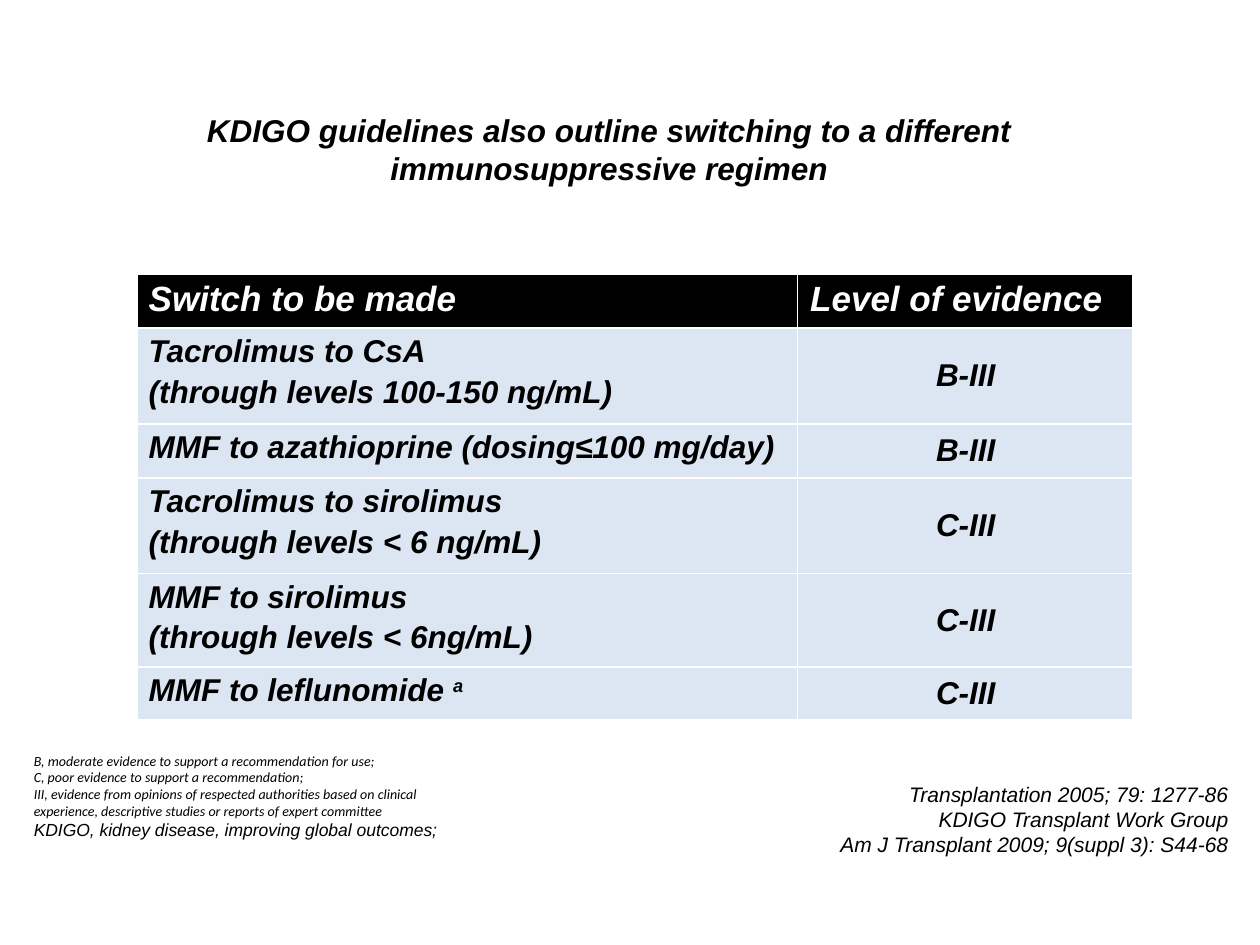
from lxml.etree import SubElement
from pptx import Presentation
from pptx.dml.color import RGBColor
from pptx.enum.text import MSO_ANCHOR, PP_ALIGN
from pptx.oxml import parse_xml
from pptx.oxml.ns import nsdecls
from pptx.util import Inches, Pt

BLACK = RGBColor(0x00, 0x00, 0x00)
WHITE = RGBColor(0xFF, 0xFF, 0xFF)
PALE_BLUE = RGBColor(0xDC, 0xE6, 0xF2)

TITLE = {"name": "Arial", "size": Pt(18), "bold": True, "italic": True}
HEADER = {**TITLE, "size": Pt(20)}
CITATION = {"name": "Arial", "size": Pt(12), "italic": True}
GRADE_NOTE = {"name": "Calibri", "size": Pt(8), "italic": True}
ABBREVIATION = {**CITATION, "size": Pt(10)}


def add_lines(frame, lines, align, color=BLACK, space_before=None):
    for index, (text, style) in enumerate(lines):
        paragraph = frame.paragraphs[0] if index == 0 else frame.add_paragraph()
        paragraph.alignment = align
        paragraph.space_before = space_before
        run = paragraph.add_run()
        run.text = text
        for attribute, value in style.items():
            setattr(run.font, attribute, value)
        run.font.color.rgb = color


def add_borders(cell, widths):
    properties = cell._tc.get_or_add_tcPr()
    for index, (side, width) in enumerate(zip("LRTB", widths)):
        border = parse_xml(f'<a:ln{side} {nsdecls("a")} w="{Pt(width)}"/>')
        fill = SubElement(border, border.tag.replace(f"ln{side}", "solidFill"))
        SubElement(fill, border.tag.replace(f"ln{side}", "srgbClr"), val=str(WHITE))
        properties.insert(index, border)


presentation = Presentation()
presentation.slide_width = Inches(10)
presentation.slide_height = Inches(7.5)
slide = presentation.slides.add_slide(presentation.slide_layouts[6])

title = "KDIGO guidelines also outline switching to a different immunosuppressive regimen"
grade_notes = [
    "B, moderate evidence to support a recommendation for use;",
    "C, poor evidence to support a recommendation;",
    "III, evidence from opinions of respected authorities based on clinical",
    "experience, descriptive studies or reports of expert committee",
]
footnotes = [(note, GRADE_NOTE) for note in grade_notes]
footnotes.append(("KDIGO, kidney disease, improving global outcomes;", ABBREVIATION))
citations = [
    "Transplantation 2005; 79: 1277-86",
    "KDIGO Transplant Work Group",
    "Am J Transplant 2009; 9(suppl 3): S44-68",
]
text_blocks = [
    ((0.42, 0.83, 8.83, 0.71), [(title, TITLE)], PP_ALIGN.CENTER, True),
    ((0.17, 5.92, 3.43, 0.81), footnotes, PP_ALIGN.LEFT, False),
    ((6, 6.15, 3.85, 0.71), [(line, CITATION) for line in citations], PP_ALIGN.RIGHT, True),
]
for bounds, lines, align, wraps in text_blocks:
    frame = slide.shapes.add_textbox(*map(Inches, bounds)).text_frame
    frame.word_wrap = wraps
    add_lines(frame, lines, align)

switches = [
    (["Switch to be made"], "Level of evidence", 0.43),
    (["Tacrolimus to CsA", "(through levels 100-150 ng/mL)"], "B-III", 0.76),
    (["MMF to azathioprine (dosing≤100 mg/day)"], "B-III", 0.43),
    (["Tacrolimus to sirolimus", "(through levels < 6 ng/mL)"], "C-III", 0.76),
    (["MMF to sirolimus", "(through levels < 6ng/mL)"], "C-III", 0.7),
    (["MMF to leflunomide "], "C-III", 0.43),
]
last_row = len(switches) - 1
evidence_table = slide.shapes.add_table(
    len(switches), 2, Inches(1.08), Inches(2.17), Inches(7.92), Inches(3.51)
).table
for column, width in zip(evidence_table.columns, (5.25, 2.67)):
    column.width = Inches(width)

for row, (switch, level, height) in enumerate(switches):
    evidence_table.rows[row].height = Inches(height)
    is_header = row == 0
    style = HEADER if is_header else TITLE
    for column, lines in enumerate((switch, [level])):
        cell = evidence_table.cell(row, column)
        is_grade = column == 1 and not is_header
        cell.vertical_anchor = MSO_ANCHOR.MIDDLE if is_grade else MSO_ANCHOR.TOP
        cell.fill.solid()
        cell.fill.fore_color.rgb = BLACK if is_header else PALE_BLUE
        add_lines(
            cell.text_frame,
            [(line, style) for line in lines],
            PP_ALIGN.CENTER if is_grade else PP_ALIGN.LEFT,
            WHITE if is_header else BLACK,
            Pt(2.8),
        )
        outer_sides = (column == 0, column == 1, is_header, row == last_row)
        add_borders(cell, [2.25 if outer else 1 for outer in outer_sides])

footnote_mark = evidence_table.cell(last_row, 0).text_frame.paragraphs[0].add_run()
footnote_mark.text = "a"
for attribute, value in TITLE.items():
    setattr(footnote_mark.font, attribute, value)
footnote_mark.font.color.rgb = BLACK
footnote_mark._r.get_or_add_rPr().set("baseline", "30000")

presentation.save("out.pptx")
